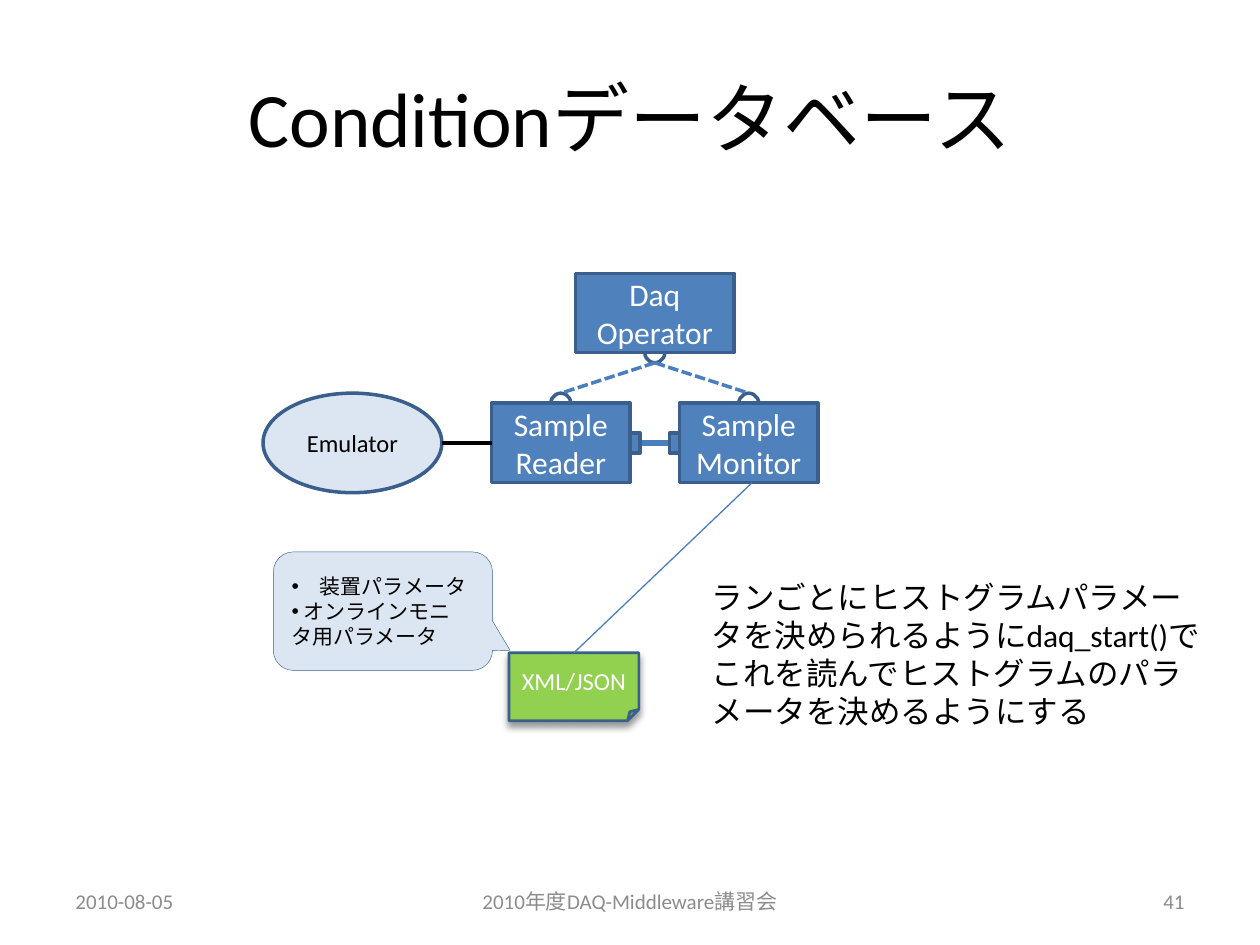
from lxml import etree
from pptx import Presentation
from pptx.dml.color import RGBColor
from pptx.enum.dml import MSO_LINE
from pptx.enum.shapes import MSO_CONNECTOR, MSO_SHAPE
from pptx.enum.text import MSO_ANCHOR, PP_ALIGN
from pptx.oxml.ns import qn
from pptx.util import Pt

RECTANGLE = MSO_SHAPE.RECTANGLE
OVAL = MSO_SHAPE.OVAL
FOLDED_CORNER = MSO_SHAPE.FOLDED_CORNER
CALLOUT = MSO_SHAPE.ROUNDED_RECTANGULAR_CALLOUT
STRAIGHT = MSO_CONNECTOR.STRAIGHT
DASHED = MSO_LINE.SQUARE_DOT
LEFT, CENTER, RIGHT = PP_ALIGN.LEFT, PP_ALIGN.CENTER, PP_ALIGN.RIGHT
TOP, MIDDLE = MSO_ANCHOR.TOP, MSO_ANCHOR.MIDDLE

FONT = "Calibri"
COLORS = {
    "black": "000000",
    "white": "FFFFFF",
    "gray": "8C8C8C",
    "blue": "4F81BD",
    "pale": "DCE6F2",
    "outline": "3A5F8C",
    "link": "4B7EBC",
    "green": "92D050",
}


def color(name):
    return RGBColor.from_string(COLORS[name])


def write_text(shape, lines, size=18, ink="black", align=CENTER, anchor=MIDDLE, bullet=None):
    frame = shape.text_frame
    frame.word_wrap = True
    frame.vertical_anchor = anchor
    for index, line in enumerate(lines):
        paragraph = frame.paragraphs[0] if index == 0 else frame.add_paragraph()
        paragraph.alignment = align
        run = paragraph.add_run()
        run.text = line
        run.font.name = FONT
        run.font.size = Pt(size)
        run.font.color.rgb = color(ink)
        if bullet:
            properties = paragraph._p.get_or_add_pPr()
            etree.SubElement(properties, qn("a:buFont"), typeface="Arial")
            etree.SubElement(properties, qn("a:buChar"), char=bullet)


def add_text(slide, box, lines, **text_format):
    shape = slide.shapes.add_textbox(*map(Pt, box))
    write_text(shape, lines, **text_format)
    return shape


def add_box(slide, kind, box, fill, line_width=2):
    shape = slide.shapes.add_shape(kind, *map(Pt, box))
    shape.shadow.inherit = False
    shape.fill.solid()
    shape.fill.fore_color.rgb = color(fill)
    shape.line.color.rgb = color("outline")
    shape.line.width = Pt(line_width)
    return shape


def add_line(slide, start, end, ink="link", width=2, dash=None):
    line = slide.shapes.add_connector(STRAIGHT, *map(Pt, (*start, *end)))
    line.line.color.rgb = color(ink)
    line.line.width = Pt(width)
    if dash:
        line.line.dash_style = dash
    etree.SubElement(line._element.spPr, qn("a:effectLst"))


def add_drop_shadow(shape):
    effects = shape._element.spPr.find(qn("a:effectLst"))
    shadow = etree.SubElement(effects, qn("a:outerShdw"), blurRad=str(Pt(4)),
                              dist=str(Pt(3)), dir="5400000", rotWithShape="0")
    tint = etree.SubElement(shadow, qn("a:srgbClr"), val=COLORS["black"])
    etree.SubElement(tint, qn("a:alpha"), val="40000")


def add_footer(slide, box):
    left, top, width, height = box
    side, middle = 168, 228
    parts = [
        (left, side, "2010-08-05", LEFT),
        (left + (width - middle) / 2, middle, "2010年度DAQ-Middleware講習会", CENTER),
        (left + width - side, side, "41", RIGHT),
    ]
    for x, part_width, text, align in parts:
        add_text(slide, (x, top, part_width, height), [text], size=12, ink="gray", align=align)


def add_components(slide, box):
    left, top, width, height = box
    box_height, operator_width, component_width = 45.4, 90.7, 79.2
    emulator_width, emulator_height = 102.2, 56.9
    port, socket_width, socket_height = 11.4, 5.7, 11.4
    row_top = top + 74.2
    row_middle = row_top + box_height / 2
    monitor_left = left + width - component_width
    reader_left = monitor_left - 107.4
    reader_right = reader_left + component_width
    operator_center = (reader_left + monitor_left + component_width) / 2
    operator_bottom = top + box_height
    component_ports = [(x + component_width / 2, row_top) for x in (reader_left, monitor_left)]

    for x, y in [(operator_center, operator_bottom), *component_ports]:
        add_box(slide, OVAL, (x - port / 2, y - port / 2, port, port), "white")

    blocks = [
        (reader_left, row_top, component_width, ["Sample", "Reader"]),
        (monitor_left, row_top, component_width, ["Sample", "Monitor"]),
        (operator_center - operator_width / 2, top, operator_width, ["Daq Operator"]),
    ]
    for x, y, block_width, lines in blocks:
        block = add_box(slide, RECTANGLE, (x, y, block_width, box_height), "blue")
        write_text(block, lines, ink="white")

    emulator = add_box(slide, OVAL, (left, row_middle - emulator_height / 2,
                                     emulator_width, emulator_height), "pale")
    write_text(emulator, ["Emulator"], size=14)

    add_line(slide, (left + emulator_width, row_middle), (reader_left, row_middle), ink="black")
    add_line(slide, (reader_right, row_middle), (monitor_left, row_middle), width=3)
    for x, y in component_ports:
        add_line(slide, (operator_center, operator_bottom + port / 2), (x, y - port / 2), dash=DASHED)
    for x in (reader_right, monitor_left - socket_width):
        add_box(slide, RECTANGLE, (x, row_middle - socket_height / 2,
                                   socket_width, socket_height), "blue")


def add_parameter_file(slide, box, monitor_point):
    left, top, width, height = box
    file_width, file_height = 74.2, 38.9
    file_left, file_top = left + width - file_width, top + height - file_height
    document = add_box(slide, FOLDED_CORNER, (file_left, file_top, file_width, file_height),
                       "green", line_width=1.5)
    add_drop_shadow(document)
    write_text(document, ["XML/JSON"], size=14, ink="white")

    callout = add_box(slide, CALLOUT, (left, top, 125.3, 67.7), "pale", line_width=0.25)
    for index, value in enumerate((0.58, 0.33, 0.17)):
        callout.adjustments[index] = value
    callout.text_frame.margin_right = Pt(11)
    write_text(callout, ["\u3000装置パラメータ".replace("\u3000", "　"), " オンラインモニタ用パラメータ"],
               size=12, align=LEFT, bullet="•")
    add_line(slide, monitor_point, (file_left + file_width / 2, file_top), width=0.75)


def main():
    presentation = Presentation()
    presentation.slide_width, presentation.slide_height = Pt(720), Pt(540)
    slide = presentation.slides.add_slide(presentation.slide_layouts[6])
    add_text(slide, (36, 21.6, 648, 90), ["Conditionデータベース"], size=44)
    add_footer(slide, (36, 500.4, 648, 28.8))
    add_components(slide, (150.3, 156.2, 317.2, 119.6))
    add_parameter_file(slide, (156.2, 315.4, 208.9, 96.5), (429.8, 275.8))
    add_text(slide, (399.6, 326.9, 300.2, 94.3),
             ["ランごとにヒストグラムパラメータを決められるようにdaq_start()"
              "でこれを読んでヒストグラムのパラメータを決めるようにする"],
             align=LEFT, anchor=TOP)
    presentation.save("out.pptx")


if __name__ == "__main__":
    main()
